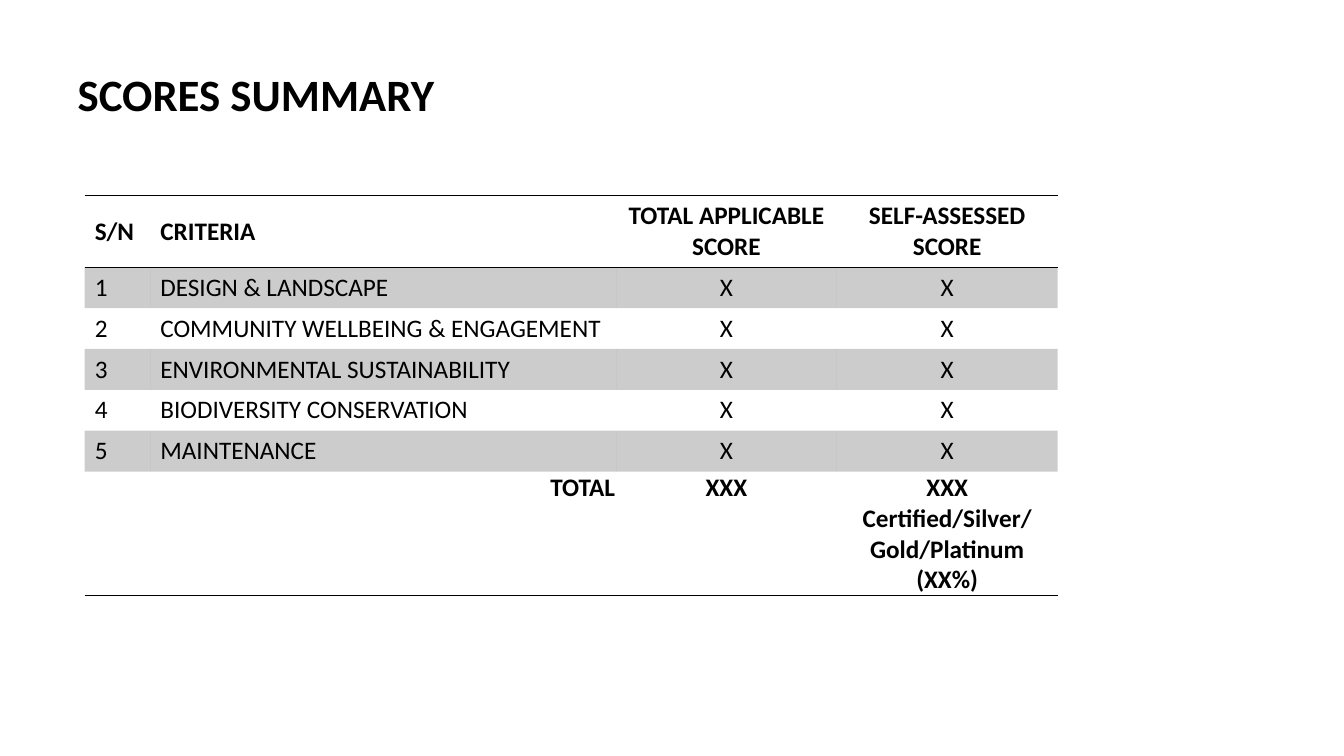
from lxml.etree import SubElement
from pptx import Presentation
from pptx.dml.color import RGBColor
from pptx.enum.text import MSO_ANCHOR, PP_ALIGN
from pptx.oxml import parse_xml
from pptx.oxml.ns import nsdecls, qn
from pptx.util import Pt

PX = 9144  # 100 px to the inch
COLORS = {"ink": "000000", "page": "FFFFFF"}
FONT = "Calibri"
NO_STYLE = "{2D5ABB26-0587-4C30-8999-92F81FD0307C}"

COLUMN_WIDTHS = [65, 462, 219, 219]
ROW_HEIGHT = 40
HEADER = ["S/N", "CRITERIA", "TOTAL APPLICABLE SCORE", "SELF-ASSESSED SCORE"]
CRITERIA = [
    "DESIGN & LANDSCAPE",
    "COMMUNITY WELLBEING & ENGAGEMENT",
    "ENVIRONMENTAL SUSTAINABILITY",
    "BIODIVERSITY CONSERVATION",
    "MAINTENANCE",
]
TOTAL = ["", "TOTAL", "XXX", "XXX\nCertified/Silver/Gold/Platinum (XX%)"]

LEFT, CENTER, RIGHT = PP_ALIGN.LEFT, PP_ALIGN.CENTER, PP_ALIGN.RIGHT
TOP, MIDDLE, BOTTOM = MSO_ANCHOR.TOP, MSO_ANCHOR.MIDDLE, MSO_ANCHOR.BOTTOM
TOTAL_INSETS = {"margin_left": PX, "margin_right": PX, "margin_top": PX, "margin_bottom": 0}


def format_paragraph(para, size, bold, align):
    para.alignment = align
    for name, value in {"name": FONT, "size": Pt(size), "bold": bold}.items():
        setattr(para.font, name, value)
    para.font.color.rgb = RGBColor.from_string(COLORS["ink"])


def add_title(page, box, text):
    title = page.shapes.title
    for name, value in zip(("left", "top", "width", "height"), box):
        setattr(title, name, value * PX)
    title.text_frame.text = text
    title.text_frame.vertical_anchor = MIDDLE
    format_paragraph(title.text_frame.paragraphs[0], 32, True, LEFT)


def shade(cell, opacity):
    cell.fill.solid()
    cell.fill.fore_color.rgb = RGBColor.from_string(COLORS["ink"])
    color = cell._tc.tcPr.find(qn("a:solidFill")).find(qn("a:srgbClr"))
    SubElement(color, qn("a:alpha")).set("val", str(opacity * 1000))


def rule(cell, sides):
    """Draw one-point lines on the given sides, in the order T, B."""
    for index, side in enumerate(sides):
        line = parse_xml(
            f'<a:ln{side} {nsdecls("a")} w="{Pt(1)}"><a:solidFill>'
            f'<a:srgbClr val="{COLORS["ink"]}"/></a:solidFill></a:ln{side}>'
        )
        cell._tc.get_or_add_tcPr().insert(index, line)


def fill_row(table, row, texts, aligns, anchors, bold=False, insets=None, shaded=False, sides=""):
    for column, text in enumerate(texts):
        cell = table.cell(row, column)
        cell.text = text
        cell.vertical_anchor = anchors[column]
        for name, value in (insets or {}).items():
            setattr(cell, name, value)
        for para in cell.text_frame.paragraphs:
            format_paragraph(para, 18, bold, aligns[column])
        if shaded:
            shade(cell, 20)
        else:
            cell.fill.background()
        rule(cell, sides)


def add_scores(page, left, top):
    rows = len(CRITERIA) + 2
    frame = page.shapes.add_table(
        rows, len(HEADER), left * PX, top * PX, sum(COLUMN_WIDTHS) * PX, rows * ROW_HEIGHT * PX
    )
    table = frame.table
    table.horz_banding = False
    table._tbl.tblPr.find(qn("a:tableStyleId")).text = NO_STYLE
    for column, width in zip(table.columns, COLUMN_WIDTHS):
        column.width = width * PX
    for row in table.rows:
        row.height = ROW_HEIGHT * PX

    aligns = [LEFT, LEFT, CENTER, CENTER]
    fill_row(table, 0, HEADER, aligns, [MIDDLE] * 4, bold=True, sides="TB")
    for number, name in enumerate(CRITERIA, 1):
        fill_row(table, number, [str(number), name, "X", "X"], aligns, [BOTTOM] * 4,
                 shaded=number % 2 == 1)
    fill_row(table, rows - 1, TOTAL, [LEFT, RIGHT, CENTER, CENTER], [TOP, TOP, TOP, MIDDLE],
             bold=True, insets=TOTAL_INSETS, sides="B")


def main():
    deck = Presentation()
    deck.slide_width, deck.slide_height = 1333 * PX, 750 * PX
    page = deck.slides.add_slide(deck.slide_layouts[5])
    page.background.fill.solid()
    page.background.fill.fore_color.rgb = RGBColor.from_string(COLORS["page"])
    add_title(page, (67, 30, 1036, 125), "SCORES SUMMARY")
    add_scores(page, 84, 194)
    deck.save("out.pptx")


if __name__ == "__main__":
    main()
